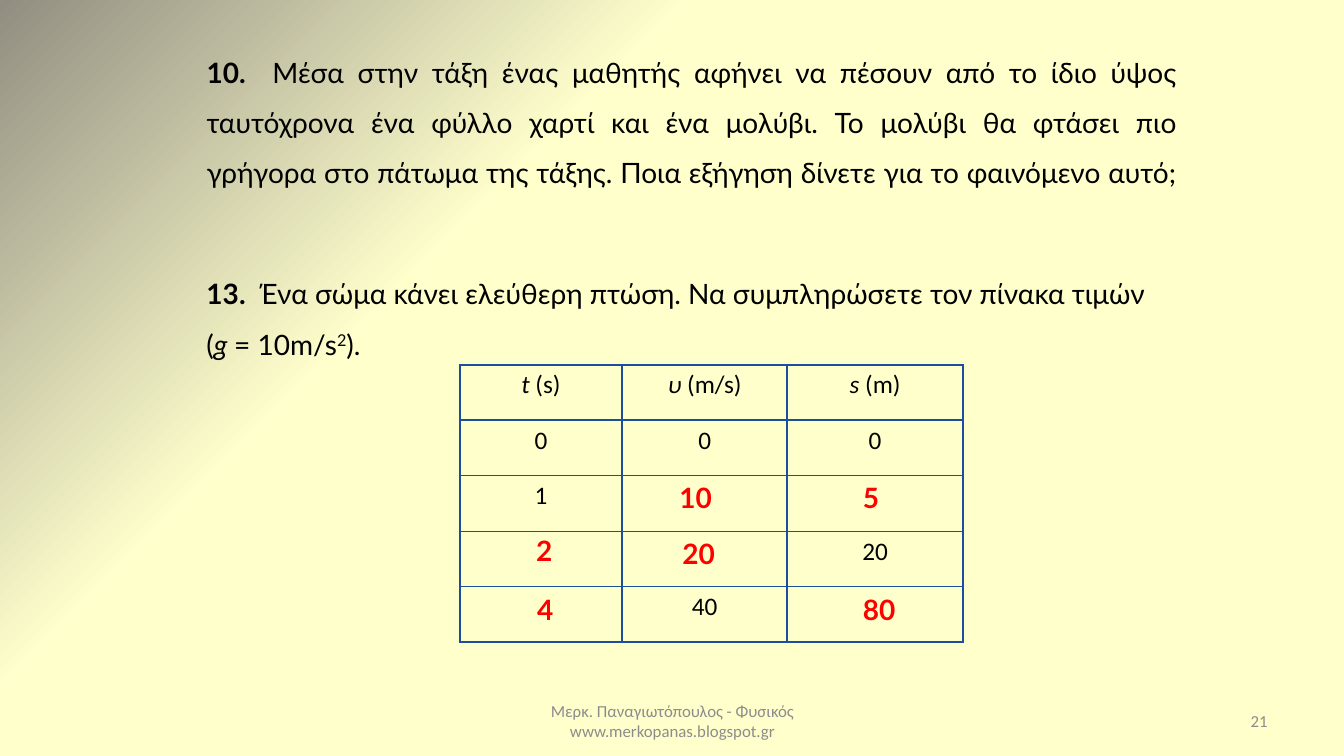
from dataclasses import dataclass

from lxml.etree import SubElement
from pptx import Presentation
from pptx.dml.color import RGBColor
from pptx.enum.text import MSO_ANCHOR, PP_ALIGN
from pptx.oxml.ns import qn
from pptx.util import Inches, Pt


@dataclass(frozen=True)
class Theme:
    paper: str = "FFFFCC"
    shade: str = "918E81"
    ink: str = "000000"
    answer: str = "FF0000"
    muted: str = "8C8C8C"
    rule: str = "1D4E9E"
    body_font: str = "Lato"
    table_font: str = "Calibri"
    body_size: int = 20
    table_size: int = 18
    footer_size: int = 12


class ExercisePage:
    def __init__(self, deck, theme):
        self.theme = theme
        self.page = deck.slides.add_slide(deck.slide_layouts[6])

    def paint_background(self):
        """Shade the top left corner with a gradient centred on the bottom right."""
        fill = self.page.background.fill
        fill.gradient()
        stops = zip(fill.gradient_stops, (0.67, 1), (self.theme.paper, self.theme.shade))
        for stop, position, color in stops:
            stop.position = position
            stop.color.rgb = RGBColor.from_string(color)
        gradient = self.page.element.find(".//" + qn("a:gradFill"))
        gradient.remove(gradient.find(qn("a:lin")))
        circle = SubElement(gradient, qn("a:path"), path="circle")
        SubElement(circle, qn("a:fillToRect"), l="100000", t="100000")

    def add_spans(self, para, spans, font, size, color):
        """Add (text, marks) runs; marks may hold b(old), i(talic) and ^ (superscript)."""
        for text, marks in spans:
            span = para.add_run()
            span.text = text
            span.font.name = font
            span.font.size = Pt(size)
            span.font.color.rgb = RGBColor.from_string(color)
            span.font.bold = "b" in marks
            span.font.italic = "i" in marks
            if "^" in marks:
                span.font._element.set("baseline", "30000")

    def add_box(self, left, top, width, height, align, anchor=MSO_ANCHOR.TOP):
        """Add an empty text box and return its first paragraph."""
        box = self.page.shapes.add_textbox(
            Inches(left), Inches(top), Inches(width), Inches(height))
        frame = box.text_frame
        frame.word_wrap = True
        frame.vertical_anchor = anchor
        para = frame.paragraphs[0]
        para.alignment = align
        return para

    def add_question(self, left, top, width, height, spans, align=PP_ALIGN.LEFT):
        para = self.add_box(left, top, width, height, align)
        para.line_spacing = 1.5
        self.add_spans(para, spans, self.theme.body_font, self.theme.body_size, self.theme.ink)

    def add_answer(self, text, left, top):
        para = self.add_box(left, top, 0.63, 0.44, PP_ALIGN.LEFT)
        self.add_spans(para, [(text, "b")], self.theme.body_font,
                       self.theme.body_size, self.theme.answer)

    def add_footer(self, left, width, lines, align):
        para = self.add_box(left, 6.95, width, 0.4, align, MSO_ANCHOR.MIDDLE)
        for number, line in enumerate(lines):
            if number:
                para.add_line_break()
            self.add_spans(para, [(line, "")], self.theme.table_font,
                           self.theme.footer_size, self.theme.muted)

    def add_border(self, cell, side, points):
        line = SubElement(cell._tc.get_or_add_tcPr(), qn("a:ln" + side), w=str(Pt(points)))
        fill = SubElement(line, qn("a:solidFill"))
        SubElement(fill, qn("a:srgbClr"), val=self.theme.rule)

    def add_value_table(self, left, top, widths, row_height, rows):
        frame = self.page.shapes.add_table(
            len(rows), len(widths), Inches(left), Inches(top),
            Inches(sum(widths)), Inches(row_height * len(rows)))
        table = frame.table
        table.first_row = table.horz_banding = False
        for column, width in zip(table.columns, widths):
            column.width = Inches(width)
        last = len(rows) - 1
        for number, values in enumerate(rows):
            table.rows[number].height = Inches(row_height)
            top_rule = 1.5 if number < 2 else 1
            bottom_rule = 1.5 if number in (0, last) else 1
            for column, spans in enumerate(values):
                cell = table.cell(number, column)
                para = cell.text_frame.paragraphs[0]
                para.alignment = PP_ALIGN.CENTER
                para.font.size = Pt(self.theme.table_size)
                self.add_spans(para, spans, self.theme.table_font,
                               self.theme.table_size, self.theme.ink)
                for side, points in zip("LRTB", (1.5, 1.5, top_rule, bottom_rule)):
                    self.add_border(cell, side, points)
                cell.fill.background()


def main():
    deck = Presentation()
    deck.slide_width, deck.slide_height = Inches(13.33), Inches(7.5)
    sheet = ExercisePage(deck, Theme())
    sheet.paint_background()

    sheet.add_footer(4.56, 4.22, ["Μερκ. Παναγιωτόπουλος - Φυσικός",
                                  "www.merkopanas.blogspot.gr"], PP_ALIGN.CENTER)
    sheet.add_footer(9.56, 3.11, ["21"], PP_ALIGN.RIGHT)

    sheet.add_question(1.95, 0.33, 9.82, 1.62, [
        ("10.  ", "b"),
        ("Μέσα στην τάξη ένας μαθητής αφήνει να πέσουν από το ίδιο ύψος ταυτόχρονα "
         "ένα φύλλο χαρτί και ένα μολύβι. To μολύβι θα φτάσει πιο γρήγορα στο πάτωμα "
         "της τάξης. Ποια εξήγηση δίνετε για το φαινόμενο αυτό; ", ""),
    ], PP_ALIGN.JUSTIFY)
    sheet.add_question(1.95, 2.53, 9.7, 1.11, [
        ("13.  ", "b"),
        ("Ένα σώμα κάνει ελεύθερη πτώση. Να συμπληρώσετε τον πίνακα τιμών (", ""),
        ("g ", "i"), ("= 10m/s", ""), ("2", "^"), (").", ""),
    ])

    header = [[("t ", "i"), ("(s)", "")], [("υ", "i"), (" (m/s)", "")],
              [("s ", "i"), ("(m)", "")]]
    given = [("0", "0", "0"), ("1", "", ""), ("", "", "20"), ("", "40", "")]
    values = [[[(text, "")] if text else [] for text in row] for row in given]
    sheet.add_value_table(4.56, 3.62, (1.61, 1.64, 1.74), 0.55, [header] + values)

    for text, left, top in (("5", 8.46, 4.72), ("10", 6.64, 4.72), ("20", 6.67, 5.27),
                            ("2", 5.22, 5.24), ("80", 8.46, 5.83), ("4", 5.23, 5.83)):
        sheet.add_answer(text, left, top)

    deck.save("out.pptx")


if __name__ == "__main__":
    main()
